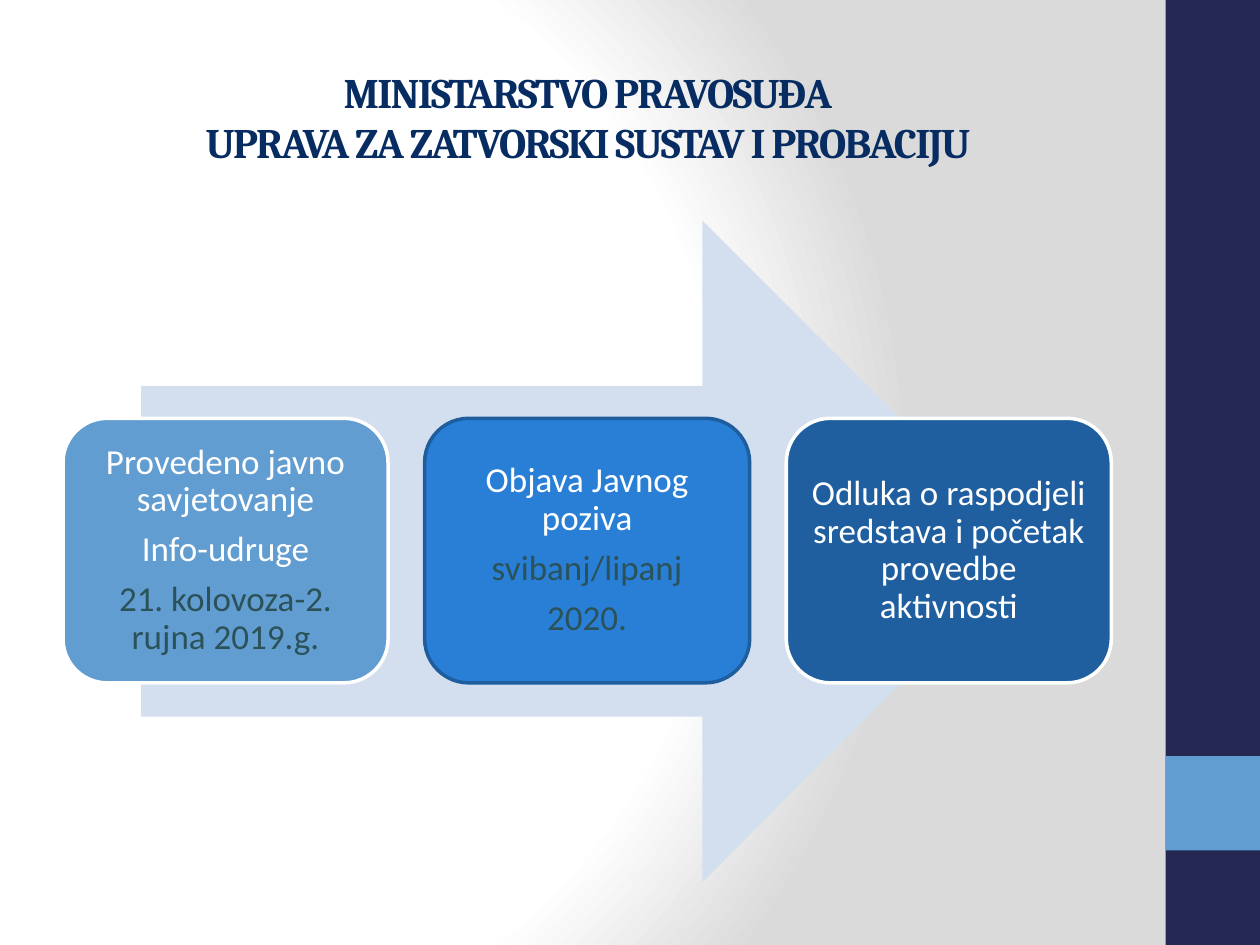
"""Build the slide on the three steps of the prison and probation grant call."""
import copy

import pptx
import pptx.dml.color
import pptx.enum.shapes
import pptx.enum.text
import pptx.oxml
import pptx.oxml.ns
import pptx.util

Inches = pptx.util.Inches
Pt = pptx.util.Pt
SHAPE = pptx.enum.shapes.MSO_SHAPE
CENTER = pptx.enum.text.PP_ALIGN.CENTER
MIDDLE = pptx.enum.text.MSO_ANCHOR.MIDDLE

COLORS = {
    "navy": "242852",
    "sky": "629DD1",
    "title": "072C62",
    "arrow": "D3DFEE",
    "blue": "297FD5",
    "outline": "1E5E9E",
    "deep": "1F5FA0",
    "white": "FFFFFF",
    "date": "2B5259",
    "gray": "DADADA",
}
TITLE_FONT = {"name": "Cambria", "size": Pt(24), "bold": True}
STEP_FONT = {"name": "Calibri", "size": Pt(20), "bold": False}
STEP_PARAGRAPH = {"alignment": CENTER, "line_spacing": 0.9,
                  "space_before": Pt(0), "space_after": Pt(7)}
STEP_FRAME = {"word_wrap": True, "vertical_anchor": MIDDLE,
              "margin_left": Inches(0.08), "margin_right": Inches(0.08),
              "margin_top": Inches(0.08), "margin_bottom": Inches(0.08)}
TITLE_LINES = ["MINISTARSTVO PRAVOSUĐA", "UPRAVA ZA ZATVORSKI SUSTAV I PROBACIJU"]
STEPS = [
    ("sky", "white", [("Provedeno javno savjetovanje", "white"),
                      ("Info-udruge", "white"),
                      ("21. kolovoza-2. rujna 2019.g.", "date")]),
    ("blue", "outline", [("Objava Javnog poziva", "white"),
                         ("svibanj/lipanj", "date"),
                         ("2020.", "date")]),
    ("deep", "white", [("Odluka o raspodjeli sredstava i početak provedbe aktivnosti",
                        "white")]),
]
STEP_LEFT, STEP_PITCH = 0.5, 2.87


def rgb(color):
    """Return the named colour."""
    return pptx.dml.color.RGBColor.from_string(COLORS[color])


def apply(target, values):
    """Set each format value on the target."""
    for attribute, value in values.items():
        setattr(target, attribute, value)


def format_run(run, font, color):
    """Give a run its font and colour."""
    apply(run.font, font)
    run.font.color.rgb = rgb(color)


def set_background(slide):
    """Fill the background with a circular gradient."""
    stops = "".join(
        f'<a:gs pos="{position * 1000}"><a:srgbClr val="{COLORS[color]}"/></a:gs>'
        for position, color in [(0, "white"), (75, "white"), (100, "gray")])
    background = pptx.oxml.parse_xml(
        f'<p:bg {pptx.oxml.ns.nsdecls("p", "a")}><p:bgPr><a:gradFill rotWithShape="1">'
        f'<a:gsLst>{stops}</a:gsLst><a:path path="circle">'
        '<a:fillToRect l="20000" t="50000" r="100000" b="50000"/></a:path>'
        '</a:gradFill><a:effectLst/></p:bgPr></p:bg>')
    slide.element.cSld.insert(0, background)


def add_block(slide, preset, box, fill, outline=None):
    """Add a flat preset shape, outlined if a colour is given."""
    block = slide.shapes.add_shape(preset, *map(Inches, box))
    block.shadow.inherit = False
    block.fill.solid()
    block.fill.fore_color.rgb = rgb(fill)
    if outline:
        block.line.color.rgb = rgb(outline)
        block.line.width = Pt(2)
    else:
        block.line.fill.background()
    return block


def fill_title(slide):
    """Place and write the two-line heading."""
    heading = slide.shapes.title
    apply(heading, {"left": Inches(0.5), "top": Inches(0.3),
                    "width": Inches(8.33), "height": Inches(1.25)})
    apply(heading.text_frame, {"vertical_anchor": MIDDLE, "word_wrap": True,
                               "auto_size": pptx.enum.text.MSO_AUTO_SIZE.NONE})
    paragraph = heading.text_frame.paragraphs[0]
    paragraph.text = "\v".join(TITLE_LINES)
    paragraph.alignment = CENTER
    for run in paragraph.runs:
        format_run(run, TITLE_FONT, "title")
        run.font._element.set("spc", "-100")
    for line_break in paragraph._p.findall(pptx.oxml.ns.qn("a:br")):
        line_break.append(copy.deepcopy(paragraph.runs[0].font._element))


def add_step(slide, index, fill, outline, lines):
    """Add one rounded step with its centred lines."""
    step = add_block(slide, SHAPE.ROUNDED_RECTANGLE,
                     (STEP_LEFT + index * STEP_PITCH, 3.32, 2.58, 2.1), fill, outline)
    frame = step.text_frame
    apply(frame, STEP_FRAME)
    frame.text = "\n".join(text for text, _ in lines)
    for paragraph, (_, color) in zip(frame.paragraphs, lines):
        apply(paragraph, STEP_PARAGRAPH)
        format_run(paragraph.runs[0], STEP_FONT, color)


def main():
    """Build and save the slide."""
    deck = pptx.Presentation()
    apply(deck, {"slide_width": Inches(10), "slide_height": Inches(7.5)})
    slide = deck.slides.add_slide(deck.slide_layouts[5])
    set_background(slide)
    add_block(slide, SHAPE.RECTANGLE, (9.25, 0, 0.75, 7.5), "navy")
    add_block(slide, SHAPE.RECTANGLE, (9.25, 6, 0.75, 0.75), "sky")
    fill_title(slide)
    add_block(slide, SHAPE.RIGHT_ARROW, (1.12, 1.75, 7.08, 5.25), "arrow")
    for index, step in enumerate(STEPS):
        add_step(slide, index, *step)
    deck.save("out.pptx")


if __name__ == "__main__":
    main()
